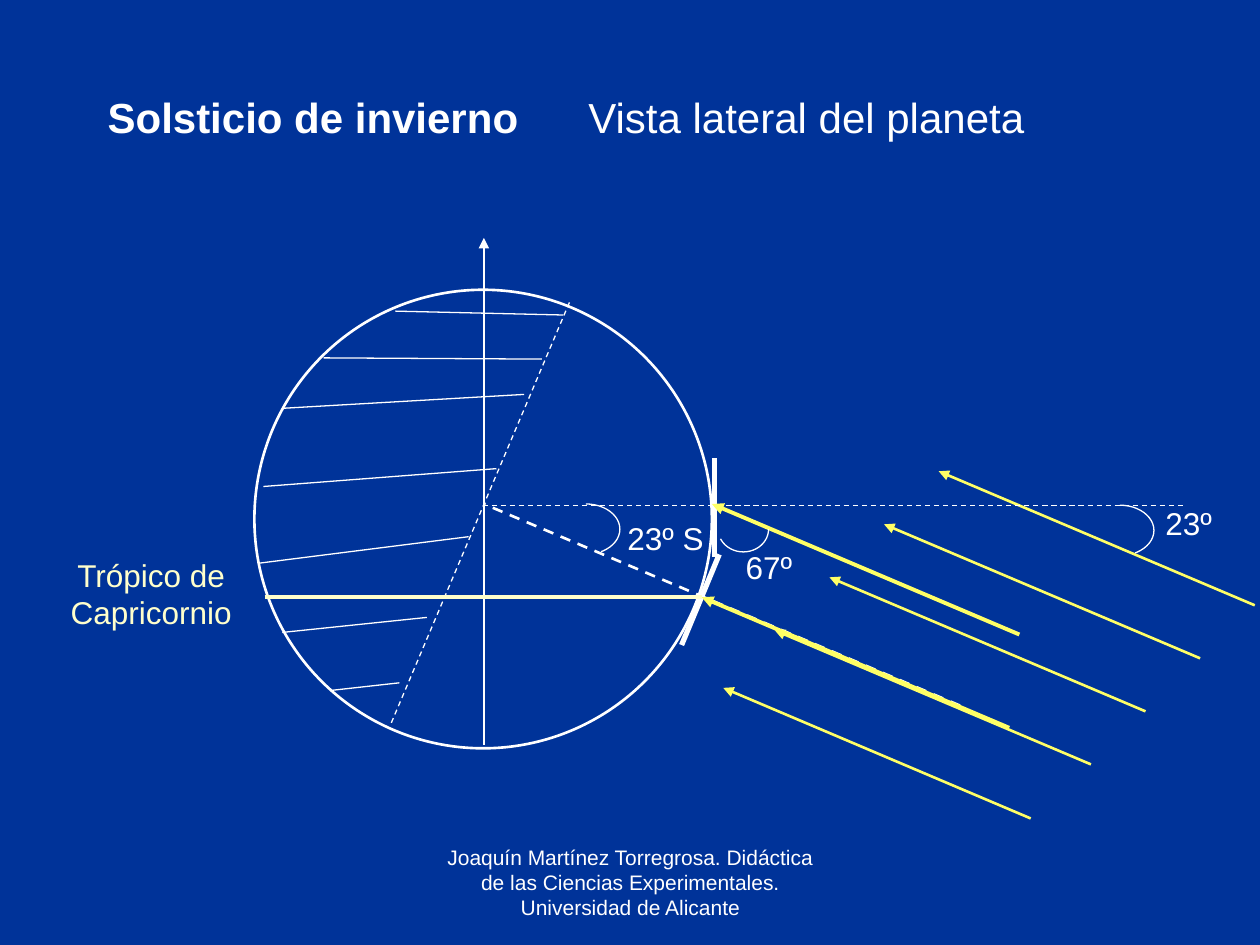
from dataclasses import dataclass
from lxml.etree import SubElement
from pptx import Presentation
from pptx.dml.color import RGBColor
from pptx.enum.dml import MSO_LINE
from pptx.enum.shapes import MSO_CONNECTOR, MSO_SHAPE
from pptx.enum.text import MSO_ANCHOR, PP_ALIGN
from pptx.oxml.ns import qn
from pptx.util import Pt


@dataclass(frozen=True)
class Theme:
    font: str = "Arial"
    background: str = "003399"
    white: str = "FFFFFF"
    sun: str = "FFFF66"
    tropic: str = "FFFFCC"
    title: int = 24
    label: int = 18
    credit: int = 12
    thin: float = 0.75
    medium: float = 1.5
    thick: float = 2.25
    heavy: float = 3


THEME = Theme()

TEXTS = [
    ("Solsticio de invierno", (44.6, 49, 268.6, 45.4), dict(size=THEME.title, bold=True)),
    ("Vista lateral del planeta", (280.8, 49, 360, 51), dict(size=THEME.title)),
    ("23º", (658.8, 284.4, 43.2, 28.8), dict(align=PP_ALIGN.LEFT, wrap=False)),
    ("23º S", (351.4, 293, 59, 28.8), dict(align=PP_ALIGN.LEFT, wrap=False)),
    ("67º", (419, 309.6, 43.2, 28.8), dict(align=PP_ALIGN.LEFT, wrap=False)),
    ("Trópico de Capricornio", (27.4, 314, 118, 50.4), dict(color=THEME.tropic)),
    ("Joaquín Martínez Torregrosa. Didáctica de las Ciencias Experimentales. Universidad de Alicante",
     (246.2, 491.8, 228.2, 37.4), dict(size=THEME.credit, anchor=MSO_ANCHOR.BOTTOM)),
]

PLANET = (145.4, 165.6, 261.4, 262)
AXIS = ((276.5, 425.5), (276.5, 136))
DAY_NIGHT_LIMIT = ((325.4, 172.8), (223.2, 414))
EQUATOR_PLANE = ((275.8, 288.7), (676, 288.7))
TROPIC_RADIUS = ((548.6, 403.2), (276.5, 288))
TROPIC = ((151.2, 341.3), (401, 341.3))
HORIZONS = [((411, 316.8), (389.5, 368.6)), ((408.2, 318.2), (408.2, 262))]

NIGHT_HATCHES = [
    ((321.8, 180), (226, 177.8)),
    ((309.6, 205.2), (185, 204.5)),
    ((299.5, 225.4), (162, 233.3)),
    ((283.7, 267.8), (150.5, 278)),
    ((267.8, 306.7), (148.3, 321.8)),
    ((244, 352.8), (161.3, 361.4)),
    ((228.2, 390.2), (188.6, 394.6)),
]

FIRST_RAY = (536.4, 269.3)
RAY_STEP = (-31.2, 30.3)
RAY_SHAFT = (180.6, 76.6)
SHORT_SHAFT = (175.7, 74.6)
LOWEST_RAY = (413.3, 393.1)
GROUND_RAYS = [(401, 341.3), (406.8, 288)]

ANGLE_ARCS = [
    ((640, 303.1), (19.4, 14.4), (270, 56)),
    ((334.8, 302.4), (19.4, 14.4), (270, 56)),
    ((424.8, 302.4), (14.4, 13), (0, 157)),
]


def add_text(page, text, frame, size=THEME.label, color=THEME.white, bold=False,
             align=PP_ALIGN.CENTER, anchor=MSO_ANCHOR.TOP, wrap=True):
    box = page.shapes.add_textbox(*map(Pt, frame))
    box.text_frame.word_wrap = wrap
    box.text_frame.vertical_anchor = anchor
    para = box.text_frame.paragraphs[0]
    para.alignment = align
    span = para.add_run()
    span.text = text
    span.font.name = THEME.font
    span.font.size = Pt(size)
    span.font.bold = bold
    span.font.color.rgb = RGBColor.from_string(color)


def style_line(line, color, width):
    line.color.rgb = RGBColor.from_string(color)
    line.width = Pt(width)


def add_line(page, start, end, color=THEME.white, width=THEME.thin, dashed=False, arrow=False):
    connector = page.shapes.add_connector(MSO_CONNECTOR.STRAIGHT, *map(Pt, (*start, *end)))
    style_line(connector.line, color, width)
    if dashed:
        connector.line.dash_style = MSO_LINE.DASH
    properties = connector._element.spPr
    if arrow:
        SubElement(properties.find(qn("a:ln")), qn("a:tailEnd"), type="triangle")
    SubElement(properties, qn("a:effectLst"))


def add_outline(page, kind, frame, width):
    shape = page.shapes.add_shape(kind, *map(Pt, frame))
    shape.shadow.inherit = False
    shape.fill.background()
    style_line(shape.line, THEME.white, width)
    return shape


def add_arc(page, center, radii, angles):
    (x, y), (across, down) = center, radii
    arc = add_outline(page, MSO_SHAPE.ARC, (x - across, y - down, 2 * across, 2 * down), THEME.thin)
    for index, angle in enumerate(angles):
        arc.adjustments[index] = angle * 0.6


def add_ray(page, tip, shaft, width=THEME.medium):
    start = (tip[0] + shaft[0], tip[1] + shaft[1])
    add_line(page, start, tip, color=THEME.sun, width=width, arrow=True)


def main():
    deck = Presentation()
    deck.slide_width, deck.slide_height = Pt(720), Pt(540)
    page = deck.slides.add_slide(deck.slide_layouts[6])
    page.background.fill.solid()
    page.background.fill.fore_color.rgb = RGBColor.from_string(THEME.background)

    add_outline(page, MSO_SHAPE.OVAL, PLANET, THEME.medium)
    add_line(page, *AXIS, arrow=True)
    for step in range(4):
        tip = tuple(first + step * gap for first, gap in zip(FIRST_RAY, RAY_STEP))
        add_ray(page, tip, RAY_SHAFT)
    add_ray(page, LOWEST_RAY, SHORT_SHAFT)
    add_line(page, *DAY_NIGHT_LIMIT, dashed=True)
    for hatch in NIGHT_HATCHES:
        add_line(page, *hatch)
    add_line(page, *EQUATOR_PLANE, dashed=True)
    add_line(page, *TROPIC_RADIUS, width=THEME.medium, dashed=True)
    for horizon in HORIZONS:
        add_line(page, *horizon, width=THEME.heavy)
    for tip in GROUND_RAYS:
        add_ray(page, tip, SHORT_SHAFT, width=THEME.thick)
    add_line(page, *TROPIC, color=THEME.tropic, width=THEME.thick)
    for arc in ANGLE_ARCS:
        add_arc(page, *arc)
    for text, frame, look in TEXTS:
        add_text(page, text, frame, **look)

    deck.save("out.pptx")


if __name__ == "__main__":
    main()
